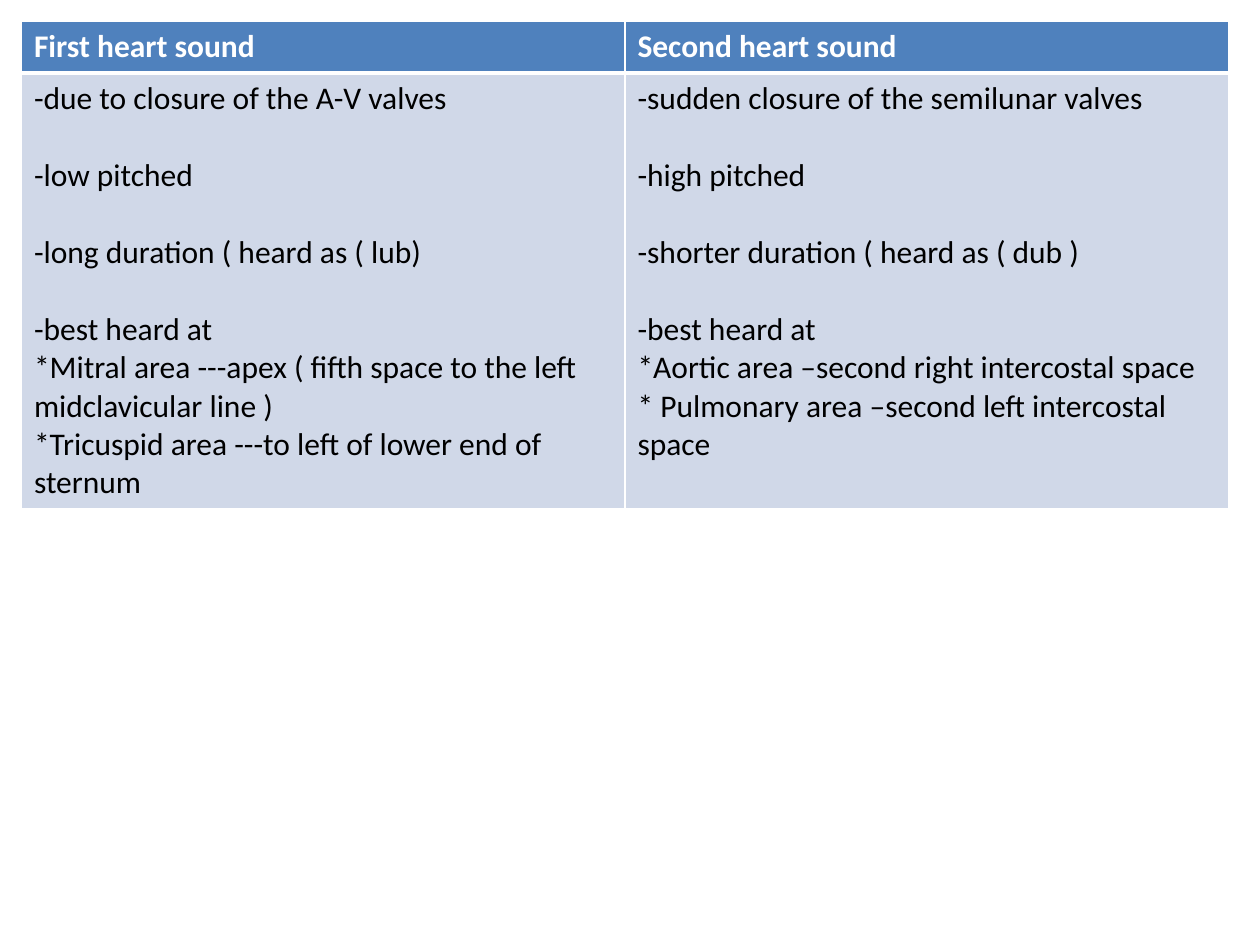
from dataclasses import dataclass

from lxml.etree import SubElement
from pptx import Presentation
from pptx.dml.color import RGBColor as Color
from pptx.oxml.ns import qn
from pptx.util import Inches, Pt


@dataclass(frozen=True)
class Theme:
    font: str = "Calibri"
    size: int = 18
    gap: int = 22
    header_fill: str = "4F81BD"
    header_text: str = "FFFFFF"
    body_fill: str = "D0D8E8"
    body_text: str = "000000"
    border: str = "FFFFFF"
    thin: int = 1
    thick: int = 3


THEME = Theme()

HEART_SOUNDS = {
    "First heart sound": [
        ["-due to closure of the A-V valves"],
        ["-low pitched"],
        ["-long duration ( heard as ( lub)"],
        [
            "-best heard at",
            "*Mitral area ---apex ( fifth space to the left midclavicular line )",
            "*Tricuspid area ---to left of lower end of sternum",
        ],
    ],
    "Second heart sound": [
        ["-sudden closure of the semilunar valves"],
        ["-high pitched"],
        ["-shorter duration ( heard as ( dub )"],
        [
            "-best heard at",
            "*Aortic area –second right intercostal space",
            "* Pulmonary area –second left intercostal space",
        ],
    ],
}


def set_borders(cell, top, bottom):
    properties = cell._tc.get_or_add_tcPr()
    widths = {"lnL": THEME.thin, "lnR": THEME.thin, "lnT": top, "lnB": bottom}
    for side, width in widths.items():
        line = SubElement(properties, qn(f"a:{side}"), w=str(Pt(width)))
        fill = SubElement(line, qn("a:solidFill"))
        SubElement(fill, qn("a:srgbClr"), val=THEME.border)


def fill_cell(cell, groups, background, color, bold):
    cell.fill.solid()
    cell.fill.fore_color.rgb = Color.from_string(background)
    frame = cell.text_frame
    frame.text = "\n".join(line for group in groups for line in group)
    paragraphs = iter(frame.paragraphs)
    for group_index, group in enumerate(groups):
        for line_index in range(len(group)):
            para = next(paragraphs)
            para.font.name = THEME.font
            para.font.size = Pt(THEME.size)
            para.font.bold = bold
            para.font.color.rgb = Color.from_string(color)
            if group_index and line_index == 0:
                para.space_before = Pt(THEME.gap)


def add_comparison_table(page, left, top, width, header_height, body_height):
    table = page.shapes.add_table(
        2, len(HEART_SOUNDS), left, top, width, header_height + body_height
    ).table
    table.rows[0].height = header_height
    table.rows[1].height = body_height
    for column, (title, groups) in enumerate(HEART_SOUNDS.items()):
        header, body = table.cell(0, column), table.cell(1, column)
        set_borders(header, THEME.thin, THEME.thick)
        set_borders(body, THEME.thick, THEME.thin)
        fill_cell(header, [[title]], THEME.header_fill, THEME.header_text, True)
        fill_cell(body, groups, THEME.body_fill, THEME.body_text, False)


def main():
    deck = Presentation()
    deck.slide_width, deck.slide_height = Inches(10), Inches(7.5)
    page = deck.slides.add_slide(deck.slide_layouts[6])
    add_comparison_table(
        page, Inches(0.17), Inches(0.17), Inches(9.58), Inches(0.41), Inches(3.44)
    )
    deck.save("out.pptx")


if __name__ == "__main__":
    main()
